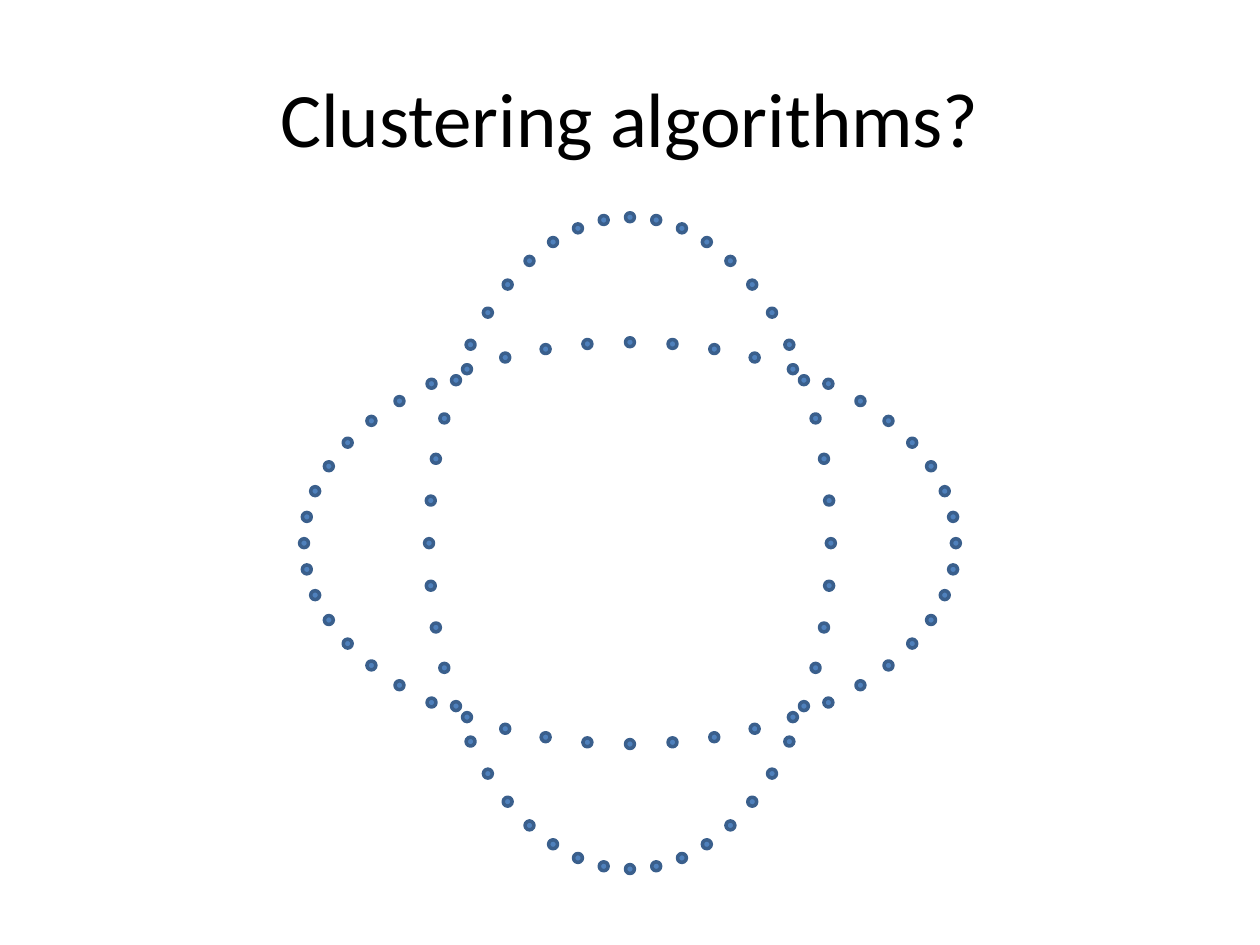
from math import cos, radians, sin

from pptx import Presentation
from pptx.dml.color import RGBColor
from pptx.enum.shapes import MSO_SHAPE
from pptx.enum.text import MSO_ANCHOR, PP_ALIGN
from pptx.util import Cm, Pt

COLORS = {"text": "000000", "dot": "4F81BD", "outline": "3A5F8C"}
TITLE_BOX = {"left": Cm(1.27), "top": Cm(0.76), "width": Cm(22.86), "height": Cm(3.18)}
TITLE_FONT = {"name": "Calibri", "size": Pt(44), "bold": False}
CENTER_X, CENTER_Y = 12.7, 10.95
SHORT_RADIUS, LONG_RADIUS = 4.05, 6.57
DOT_SIZE = 0.18
DOTS_PER_RING = 48


def set_attrs(obj, values):
    for name, value in values.items():
        setattr(obj, name, value)


def add_title(s, text):
    sp = s.shapes.title
    set_attrs(sp, TITLE_BOX)
    tf = sp.text_frame
    set_attrs(tf, {"word_wrap": True, "vertical_anchor": MSO_ANCHOR.MIDDLE})
    p = tf.paragraphs[0]
    p.alignment = PP_ALIGN.CENTER
    r = p.add_run()
    r.text = text
    set_attrs(r.font, TITLE_FONT)
    r.font.color.rgb = RGBColor.from_string(COLORS["text"])


def add_dot(group, x, y):
    sp = group.shapes.add_shape(
        MSO_SHAPE.OVAL,
        Cm(x - DOT_SIZE / 2), Cm(y - DOT_SIZE / 2), Cm(DOT_SIZE), Cm(DOT_SIZE),
    )
    sp.shadow.inherit = False
    sp.fill.solid()
    sp.fill.fore_color.rgb = RGBColor.from_string(COLORS["dot"])
    sp.line.color.rgb = RGBColor.from_string(COLORS["outline"])
    sp.line.width = Pt(2)


def add_ring(group, radius_x, radius_y):
    for i in range(DOTS_PER_RING):
        angle = radians(360 / DOTS_PER_RING * i)
        add_dot(group, CENTER_X + radius_x * sin(angle), CENTER_Y - radius_y * cos(angle))


def main():
    prs = Presentation()
    set_attrs(prs, {"slide_width": Cm(25.4), "slide_height": Cm(19.05)})
    s = prs.slides.add_slide(prs.slide_layouts[5])
    add_title(s, "Clustering algorithms?")
    rings = s.shapes.add_group_shape()
    add_ring(rings, SHORT_RADIUS, LONG_RADIUS)
    add_ring(rings, LONG_RADIUS, SHORT_RADIUS)
    prs.save("out.pptx")


if __name__ == "__main__":
    main()
